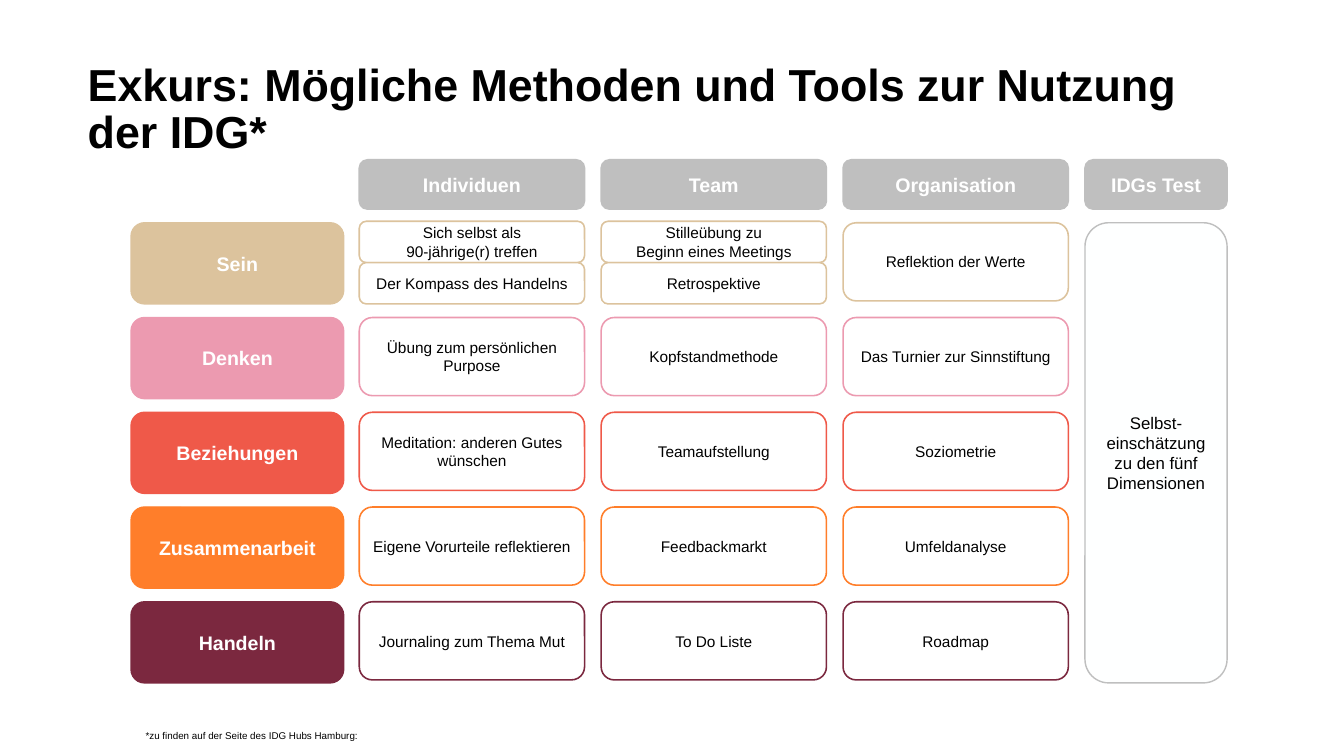
from dataclasses import dataclass

from pptx import Presentation
from pptx.dml.color import RGBColor
from pptx.enum.shapes import MSO_SHAPE
from pptx.enum.text import MSO_ANCHOR, MSO_AUTO_SIZE, PP_ALIGN
from pptx.util import Inches, Pt

TITLE = "Exkurs: Mögliche Methoden und Tools zur Nutzung der IDG*"
FOOTNOTE = "*zu finden auf der Seite des IDG Hubs Hamburg:"
AUDIENCES = ["Individuen", "Team", "Organisation"]
TEST = ("IDGs Test", "Selbst-einschätzung zu den fünf Dimensionen")
# Dimension, colour, methods per audience (a tuple stacks several boxes in one cell)
DIMENSIONS = [
    ("Sein", "DCC39D", [
        ("Sich selbst als\n90-jährige(r) treffen", "Der Kompass des Handelns"),
        ("Stilleübung zu\nBeginn eines Meetings", "Retrospektive"),
        ("Reflektion der Werte",)]),
    ("Denken", "EC9AB0", [
        ("Übung zum persönlichen Purpose",), ("Kopfstandmethode",),
        ("Das Turnier zur Sinnstiftung",)]),
    ("Beziehungen", "EF5949", [
        ("Meditation: anderen Gutes wünschen",), ("Teamaufstellung",), ("Soziometrie",)]),
    ("Zusammenarbeit", "FF7E2A", [
        ("Eigene Vorurteile reflektieren",), ("Feedbackmarkt",), ("Umfeldanalyse",)]),
    ("Handeln", "7B283F", [
        ("Journaling zum Thema Mut",), ("To Do Liste",), ("Roadmap",)]),
]


@dataclass(frozen=True)
class Theme:
    font: str = "Arial"
    black: str = "000000"
    ink: str = "010101"
    white: str = "FFFFFF"
    test_fill: str = "FEFFFF"
    grey: str = "BFBFBF"
    title: int = 64
    label: int = 28
    test: int = 24
    method: int = 22
    note: int = 14


T = Theme()

# Grid in inches
LABEL_X, LABEL_W, LABEL_H = 2.6, 4.22, 1.61
COL_X, COL_W, GAP = 7.13, 4.47, 0.33
HEAD_Y, HEAD_H = 3.17, 0.98
ROW_Y, ROW_PITCH, CELL_H = 4.42, 1.88, 1.55
STACK_H, STACK_RISE = 0.82, 0.03
TEST_W = 2.82


def style(tf, size, color, bold=False, align=PP_ALIGN.LEFT):
    for p in tf.paragraphs:
        p.alignment = align
        for r in p.runs:
            r.font.name, r.font.size, r.font.bold = T.font, Pt(size), bold
            r.font.color.rgb = RGBColor.from_string(color)


def add_box(s, text, x, y, w, h, line, fill, size, color, bold=False, weight=2.25):
    sp = s.shapes.add_shape(MSO_SHAPE.ROUNDED_RECTANGLE, *map(Inches, (x, y, w, h)))
    sp.shadow.inherit = False
    sp.fill.solid()
    sp.fill.fore_color.rgb = RGBColor.from_string(fill)
    sp.line.color.rgb = RGBColor.from_string(line)
    sp.line.width = Pt(weight)
    tf = sp.text_frame
    tf.word_wrap = True
    tf.vertical_anchor = MSO_ANCHOR.MIDDLE
    tf.text = text
    style(tf, size, color, bold, PP_ALIGN.CENTER)


def add_label(s, text, x, y, w, h, color, weight=2.25):
    add_box(s, text, x, y, w, h, color, color, T.label, T.white, True, weight)


def add_title(s):
    sp = s.shapes.title
    sp.left, sp.top, sp.width, sp.height = map(Inches, (1.74, 1.24, 23.11, 0.94))
    tf = sp.text_frame
    tf.text = TITLE
    tf.word_wrap = True
    tf.auto_size = MSO_AUTO_SIZE.NONE
    tf.vertical_anchor = MSO_ANCHOR.TOP
    tf.margin_left = tf.margin_top = tf.margin_right = tf.margin_bottom = 0
    tf.paragraphs[0].line_spacing = Pt(67.9)
    style(tf, T.title, T.black, True)


def add_footnote(s):
    sp = s.shapes.add_textbox(*map(Inches, (2.79, 14.42, 4.49, 0.34)))
    tf = sp.text_frame
    tf.text = FOOTNOTE
    tf.word_wrap = False
    tf.auto_size = MSO_AUTO_SIZE.SHAPE_TO_FIT_TEXT
    style(tf, T.note, T.black)


def main():
    prs = Presentation()
    prs.slide_width, prs.slide_height = Inches(26.67), Inches(15)
    s = prs.slides.add_slide(prs.slide_layouts[5])
    add_title(s)

    columns = [COL_X + i * (COL_W + GAP) for i in range(len(AUDIENCES) + 1)]
    for x, audience in zip(columns, AUDIENCES):
        add_label(s, audience, x, HEAD_Y, COL_W, HEAD_H, T.grey)

    for row, (name, color, cells) in enumerate(DIMENSIONS):
        y = ROW_Y + row * ROW_PITCH
        add_label(s, name, LABEL_X, y, LABEL_W, LABEL_H, color, weight=2)
        for x, methods in zip(columns, cells):
            stacked = len(methods) > 1
            top, h = (y - STACK_RISE, STACK_H) if stacked else (y, CELL_H)
            for i, method in enumerate(methods):
                add_box(s, method, x, top + i * h, COL_W, h, color, T.white, T.method, T.ink)

    heading, description = TEST
    test_h = (len(DIMENSIONS) - 1) * ROW_PITCH + LABEL_H
    add_label(s, heading, columns[-1], HEAD_Y, TEST_W, HEAD_H, T.grey)
    add_box(s, description, columns[-1], ROW_Y, TEST_W, test_h,
            T.grey, T.test_fill, T.test, T.ink, weight=2)

    add_footnote(s)
    prs.save("out.pptx")


if __name__ == "__main__":
    main()
